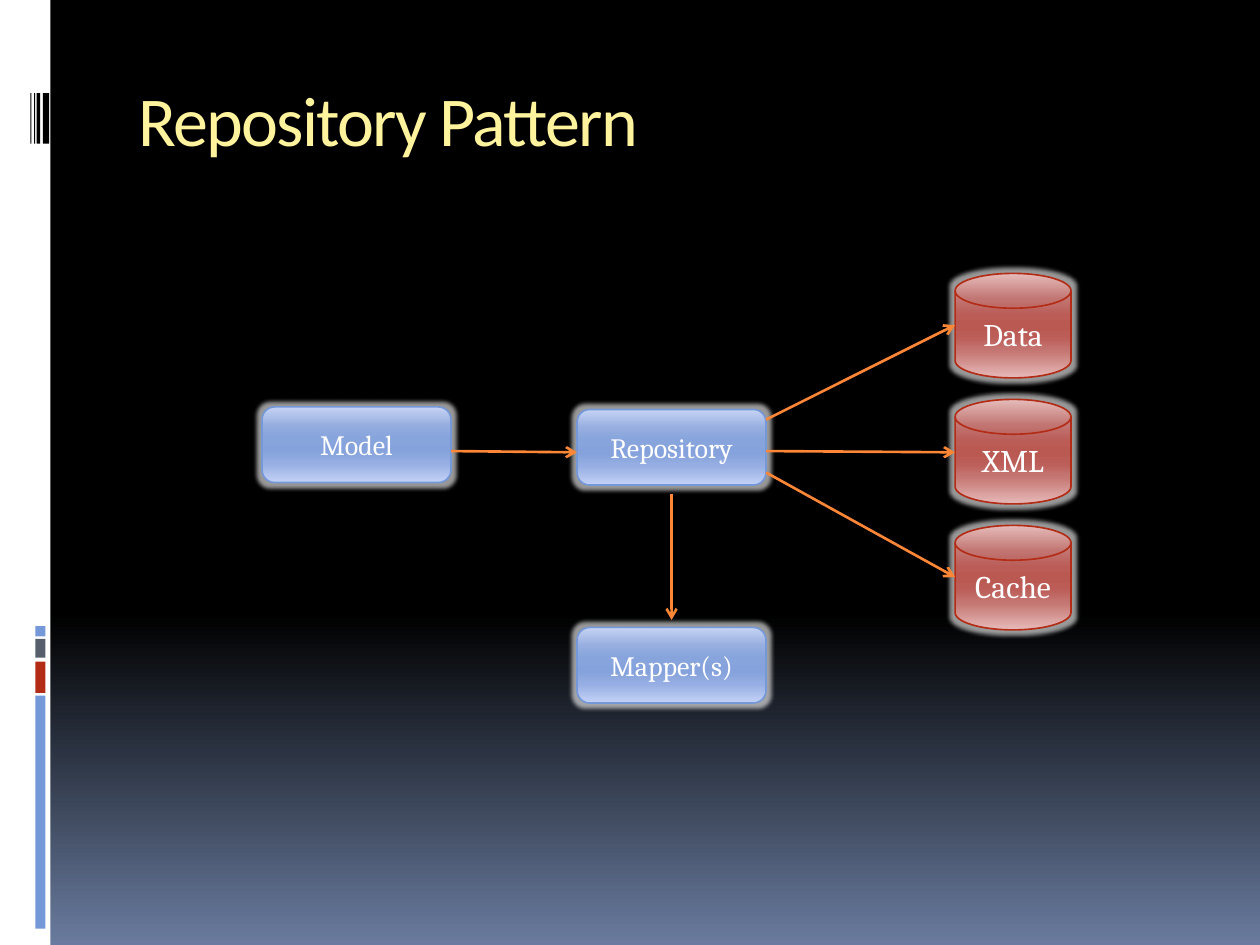
from typing import NamedTuple

import pptx
import pptx.dml.color
import pptx.enum.shapes
import pptx.enum.text
import pptx.oxml.ns
import pptx.util
from lxml import etree

Inches = pptx.util.Inches
Pt = pptx.util.Pt
RGBColor = pptx.dml.color.RGBColor
MSO_SHAPE = pptx.enum.shapes.MSO_SHAPE
MSO_ANCHOR = pptx.enum.text.MSO_ANCHOR
PP_ALIGN = pptx.enum.text.PP_ALIGN
qn = pptx.oxml.ns.qn

WHITE = RGBColor(0xFF, 0xFF, 0xFF)
BLACK = RGBColor(0, 0, 0)
BLUE = RGBColor(0x75, 0x98, 0xD9)
RED = RGBColor(0xB3, 0x2C, 0x16)
SLATE = RGBColor(0x57, 0x5F, 0x6D)
ORANGE = RGBColor(0xFE, 0x86, 0x37)
YELLOW = RGBColor(0xFF, 0xF3, 0x9D)

POSITIONS = (0, 25, 40, 50, 60, 75, 100)
BLUE_STOPS = tuple(zip(POSITIONS, (
    "C6D3F4", "95ADDF", "87A4DC", "85A2DC", "87A4DC", "96AEE3", "C4D2F6")))
RED_STOPS = tuple(zip(POSITIONS, (
    "E5BCBA", "C17471", "BB5C57", "BA5852", "BB5C57", "C67874", "E6BAB9")))
BACKGROUND_STOPS = ((0, "000000"), (65, "000000"), (100, "697B9E"))


class Bar(NamedTuple):
    left: float
    top: float
    width: float
    height: float
    color: RGBColor


class NodeStyle(NamedTuple):
    shape: MSO_SHAPE
    width: float
    height: float
    stops: tuple
    line: RGBColor
    size: int


class Node(NamedTuple):
    text: str
    left: float
    top: float
    style: NodeStyle


class Arrow(NamedTuple):
    x1: float
    y1: float
    x2: float
    y2: float


BOX = NodeStyle(MSO_SHAPE.ROUNDED_RECTANGLE, 1.5, 0.6, BLUE_STOPS, BLUE, 16)
STORE = NodeStyle(MSO_SHAPE.FLOWCHART_MAGNETIC_DISK, 0.92, 0.83, RED_STOPS, RED, 18)
STORE_LEFT, STORE_TOP = 7.58, 2.17

BARS = [
    Bar(0, 0, 0.4, 7.5, WHITE),
    Bar(0.28, 5.52, 0.08, 1.85, BLUE),
    Bar(0.28, 5.25, 0.08, 0.25, RED),
    Bar(0.28, 5.07, 0.08, 0.15, SLATE),
    Bar(0.28, 4.97, 0.08, 0.08, BLUE),
] + [Bar(left, 0.74, width, 0.4, BLACK)
     for left, width in ((0.34, 0.05), (0.29, 0.03), (0.27, 0.01), (0.24, 0.01))]

NODES = [
    Node("Model", 2.08, 3.23, BOX),
    Node("Repository", 4.58, 3.25, BOX),
    Node("Mapper(s)", 4.58, 4.98, BOX),
] + [Node(text, STORE_LEFT, STORE_TOP + i, STORE)
     for i, text in enumerate(("Data", "XML", "Cache"))]

ARROWS = [
    Arrow(3.58, 3.58, 4.58, 3.59),
    Arrow(6.08, 3.33, STORE_LEFT, 2.58),
    Arrow(6.08, 3.58, STORE_LEFT, 3.59),
    Arrow(6.08, 3.75, STORE_LEFT, 4.58),
    Arrow(5.33, 3.92, 5.33, 4.92),
]


def set_gradient(fill, element, stops: tuple) -> None:
    fill.gradient()
    fill.gradient_angle = 270
    stop_list = element.find(".//" + qn("a:gsLst"))
    for old in list(stop_list):
        stop_list.remove(old)
    for position, color in stops:
        stop = etree.SubElement(stop_list, qn("a:gs"), pos=str(position * 1000))
        etree.SubElement(stop, qn("a:srgbClr"), val=color)


def add_glow(sp) -> None:
    effects = sp.element.find(".//" + qn("a:effectLst"))
    glow = etree.SubElement(effects, qn("a:glow"), rad=str(Inches(0.07)))
    color = etree.SubElement(glow, qn("a:srgbClr"), val="FFFFFF")
    etree.SubElement(color, qn("a:alpha"), val="60000")


def write_text(tf, text: str, *, font: str, size: int, color: RGBColor,
               align=PP_ALIGN.LEFT, anchor=MSO_ANCHOR.TOP, spacing: int = 0) -> None:
    tf.word_wrap = True
    tf.vertical_anchor = anchor
    p = tf.paragraphs[0]
    p.alignment = align
    r = p.add_run()
    r.text = text
    r.font.name = font
    r.font.size = Pt(size)
    r.font.color.rgb = color
    if spacing:
        r.font.element.set("spc", str(spacing * 100)) if hasattr(
            r.font, "element") else r._r.get_or_add_rPr().set("spc", str(spacing * 100))


def add_bar(s, bar: Bar) -> None:
    sp = s.shapes.add_shape(MSO_SHAPE.RECTANGLE, *map(Inches, bar[:4]))
    sp.shadow.inherit = False
    sp.fill.solid()
    sp.fill.fore_color.rgb = bar.color
    sp.line.fill.background()


def add_node(s, node: Node) -> None:
    style = node.style
    sp = s.shapes.add_shape(style.shape, Inches(node.left), Inches(node.top),
                            Inches(style.width), Inches(style.height))
    sp.shadow.inherit = False
    set_gradient(sp.fill, sp.element, style.stops)
    sp.line.color.rgb = style.line
    sp.line.width = Pt(0.94)
    add_glow(sp)
    write_text(sp.text_frame, node.text, font="Cambria", size=style.size,
               color=WHITE, align=PP_ALIGN.CENTER, anchor=MSO_ANCHOR.MIDDLE)


def add_arrow(s, arrow: Arrow) -> None:
    sp = s.shapes.add_connector(pptx.enum.shapes.MSO_CONNECTOR.STRAIGHT,
                                *map(Inches, arrow))
    sp.line.color.rgb = ORANGE
    sp.line.width = Pt(1.5)
    etree.SubElement(sp.element.find(".//" + qn("a:ln")), qn("a:tailEnd"), type="arrow")
    etree.SubElement(sp.element.spPr, qn("a:effectLst"))


def main() -> None:
    prs = pptx.Presentation()
    prs.slide_width = Inches(10)
    prs.slide_height = Inches(7.5)
    s = prs.slides.add_slide(prs.slide_layouts[6])
    set_gradient(s.background.fill, s.element, BACKGROUND_STOPS)
    for bar in BARS:
        add_bar(s, bar)
    title = s.shapes.add_textbox(Inches(1), Inches(0.56), Inches(8.5), Inches(1))
    write_text(title.text_frame, "Repository Pattern", font="Calibri", size=40,
               color=YELLOW, spacing=-1)
    for node in NODES:
        add_node(s, node)
    for arrow in ARROWS:
        add_arrow(s, arrow)
    prs.save("out.pptx")


if __name__ == "__main__":
    main()
